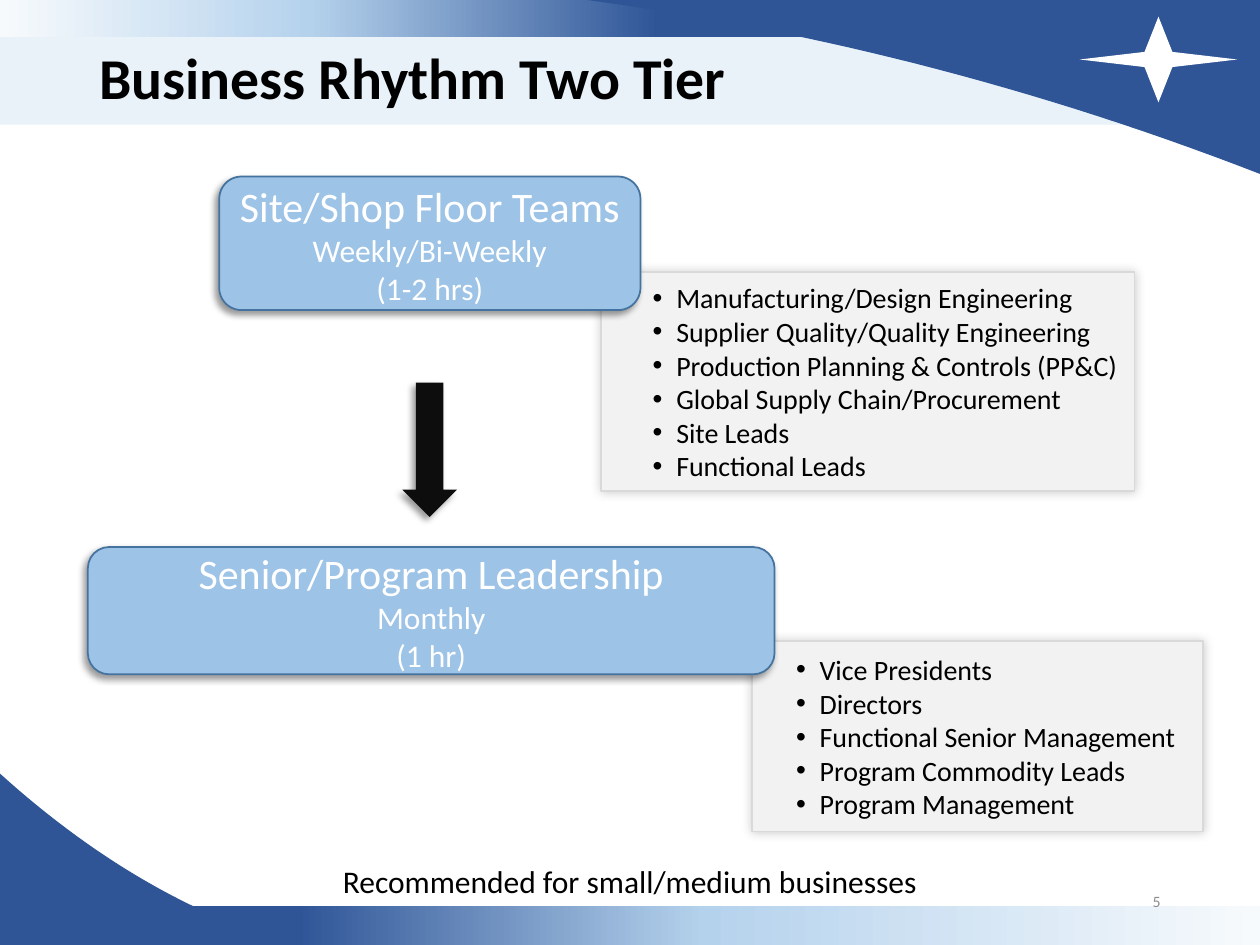
from copy import deepcopy

from lxml import etree
from pptx import Presentation
from pptx.dml.color import RGBColor
from pptx.enum.shapes import MSO_SHAPE
from pptx.enum.text import MSO_ANCHOR, PP_ALIGN
from pptx.oxml.ns import qn
from pptx.util import Pt

RECTANGLE = MSO_SHAPE.RECTANGLE
ROUNDED = MSO_SHAPE.ROUNDED_RECTANGLE
DOWN_ARROW = MSO_SHAPE.DOWN_ARROW
STAR = MSO_SHAPE.STAR_4_POINT
LEFT, CENTER, RIGHT = PP_ALIGN.LEFT, PP_ALIGN.CENTER, PP_ALIGN.RIGHT
TOP, MIDDLE = MSO_ANCHOR.TOP, MSO_ANCHOR.MIDDLE

WHITE = RGBColor(0xFF, 0xFF, 0xFF)
BLACK = RGBColor(0x00, 0x00, 0x00)
NAVY = RGBColor(0x2F, 0x55, 0x97)
MID_BLUE = RGBColor(0xB5, 0xD2, 0xEC)
ICE = RGBColor(0xF7, 0xFA, 0xFD)
BAND_BLUE = RGBColor(0xBD, 0xD7, 0xEE)
TIER_BLUE = RGBColor(0x9D, 0xC3, 0xE6)
TIER_LINE = RGBColor(0x43, 0x73, 0x9E)
PANEL_GREY = RGBColor(0xF2, 0xF2, 0xF2)
PANEL_LINE = RGBColor(0xD9, 0xD9, 0xD9)
ARROW_BLACK = RGBColor(0x0D, 0x0D, 0x0D)
NUMBER_GREY = RGBColor(0x8C, 0x8C, 0x8C)

FONT = "Calibri"
# Shadows: opacity in percent, blur, distance, direction in degrees
PANEL_SHADOW = (20, 6, 0, 225)
TIER_SHADOW = (40, 4, 3, 135)


def add_box(slide, kind, box, fill=None, line=None, shadow=None):
    shape = slide.shapes.add_shape(kind, *map(Pt, box))
    shape.shadow.inherit = False
    if fill is not None:
        shape.fill.solid()
        shape.fill.fore_color.rgb = fill
    if line is None:
        shape.line.fill.background()
    else:
        shape.line.color.rgb = line
        shape.line.width = Pt(1)
    if shadow:
        add_shadow(shape, *shadow)
    return shape


def add_shadow(shape, opacity, blur, distance, direction):
    effects = shape._element.spPr.find(qn("a:effectLst"))
    outer = etree.SubElement(
        effects, qn("a:outerShdw"), blurRad=str(Pt(blur)), dist=str(Pt(distance)),
        dir=str(direction * 60000), algn="ctr", rotWithShape="0")
    color = etree.SubElement(outer, qn("a:srgbClr"), val=str(BLACK))
    etree.SubElement(color, qn("a:alpha"), val=str(opacity * 1000))


def add_gradient_bar(slide, box, stops, rotation=0):
    bar = add_box(slide, RECTANGLE, box)
    bar.rotation = rotation
    bar.fill.gradient()
    bar.fill.gradient_angle = 0
    stop_list = next(bar._element.spPr.iter(qn("a:gsLst")))
    stop_list.append(deepcopy(stop_list[-1]))
    for stop, (position, color) in zip(bar.fill.gradient_stops, stops):
        stop.position = position
        stop.color.rgb = color


def curve_points(start, control_1, control_2, end, steps=32):
    for step in range(1, steps + 1):
        t = step / steps
        weights = ((1 - t) ** 3, 3 * t * (1 - t) ** 2, 3 * t ** 2 * (1 - t), t ** 3)
        yield tuple(sum(w * c for w, c in zip(weights, axis))
                    for axis in zip(start, control_1, control_2, end))


def add_swoosh(slide, corner, curve):
    """A filled corner of the slide, bounded by one cubic curve."""
    points = [corner, curve[0], *curve_points(*curve)]
    points = [(Pt(x), Pt(y)) for x, y in points]
    builder = slide.shapes.build_freeform(*points[0])
    builder.add_line_segments(points[1:], close=True)
    shape = builder.convert_to_shape()
    shape.shadow.inherit = False
    shape.fill.solid()
    shape.fill.fore_color.rgb = NAVY
    shape.line.fill.background()


def write_lines(shape, lines, color, align=LEFT, anchor=MIDDLE, bold=False):
    """Write one paragraph per (text, size) pair."""
    frame = shape.text_frame
    frame.word_wrap = True
    frame.vertical_anchor = anchor
    for index, (text, size) in enumerate(lines):
        paragraph = frame.paragraphs[0] if index == 0 else frame.add_paragraph()
        paragraph.alignment = align
        run = paragraph.add_run()
        run.text = text
        run.font.name = FONT
        run.font.size = Pt(size)
        run.font.bold = bold
        run.font.color.rgb = color
    return frame.paragraphs


def add_label(slide, box, text, size, **style):
    label = slide.shapes.add_textbox(*map(Pt, box))
    return write_lines(label, [(text, size)], **style)


def add_panel(slide, box, indent, items):
    panel = add_box(slide, RECTANGLE, box, PANEL_GREY, PANEL_LINE, PANEL_SHADOW)
    for paragraph in write_lines(panel, [(item, 16) for item in items], BLACK):
        properties = paragraph._p.get_or_add_pPr()
        properties.set("marL", str(Pt(indent)))
        properties.set("indent", str(Pt(-13.5)))
        etree.SubElement(properties, qn("a:buFont"), typeface="Arial")
        etree.SubElement(properties, qn("a:buChar"), char="•")


def add_tier(slide, box, name, frequency, duration):
    tier = add_box(slide, ROUNDED, box, TIER_BLUE, TIER_LINE, TIER_SHADOW)
    write_lines(tier, [(name, 24), (frequency, 18), (duration, 18)], WHITE, CENTER)


def add_background(slide):
    band = add_box(slide, RECTANGLE, (0, 0, 665.3, 71.3), BAND_BLUE)
    band_color = next(band._element.spPr.iter(qn("a:srgbClr")))
    etree.SubElement(band_color, qn("a:alpha"), val="32000")
    add_gradient_bar(slide, (0, 0, 465, 21),
                     [(0, ICE), (0.38, MID_BLUE), (0.81, NAVY)])
    add_swoosh(slide, (720, -2.9),
               [(312.5, -2.9), (439.2, 12.2), (577.4, 43.9), (720, 99.4)])
    # Plain emblem
    add_box(slide, STAR, (617, 9.5, 90, 49), WHITE)
    add_gradient_bar(slide, (14.4, 517.7, 705.6, 22.3),
                     [(0, ICE), (0.45, MID_BLUE), (0.78, NAVY)], rotation=180)
    add_swoosh(slide, (0, 540),
               [(169.2, 540), (116.6, 525.6), (59, 495.4), (0, 442.1)])


def main():
    presentation = Presentation()
    presentation.slide_width, presentation.slide_height = Pt(720), Pt(540)
    slide = presentation.slides.add_slide(presentation.slide_layouts[6])

    add_background(slide)
    title = add_label(slide, (49.7, 20.9, 646.6, 50.4), "Business Rhythm Two Tier",
                      33, color=BLACK, bold=True)
    title[0].line_spacing = 0.9

    # Participants of each tier
    add_panel(slide, (429.8, 366.5, 257.8, 108.7), 31.5, [
        "Vice Presidents", "Directors", "Functional Senior Management",
        "Program Commodity Leads", "Program Management"])
    add_panel(slide, (343.4, 155.5, 304.9, 125.3), 36, [
        "Manufacturing/Design Engineering", "Supplier Quality/Quality Engineering",
        "Production Planning & Controls (PP&C)", "Global Supply Chain/Procurement",
        "Site Leads", "Functional Leads"])

    # Tiers and the arrow between them
    add_tier(slide, (50.2, 312.6, 392.4, 72.7),
             "Senior/Program Leadership", "Monthly", "(1 hr)")
    add_box(slide, DOWN_ARROW, (229.9, 218.7, 31.3, 76.8), ARROW_BLACK,
            shadow=TIER_SHADOW)
    add_tier(slide, (125.3, 100.9, 240.7, 76.3),
             "Site/Shop Floor Teams", "Weekly/Bi-Weekly", "(1-2 hrs)")

    # Footer
    add_label(slide, (0, 489, 720, 29), "Recommended for small/medium businesses",
              18, color=BLACK, align=CENTER, anchor=TOP)
    add_label(slide, (508.3, 500.8, 162, 28.8), "5", 9,
              color=NUMBER_GREY, align=RIGHT)

    presentation.save("out.pptx")


if __name__ == "__main__":
    main()
